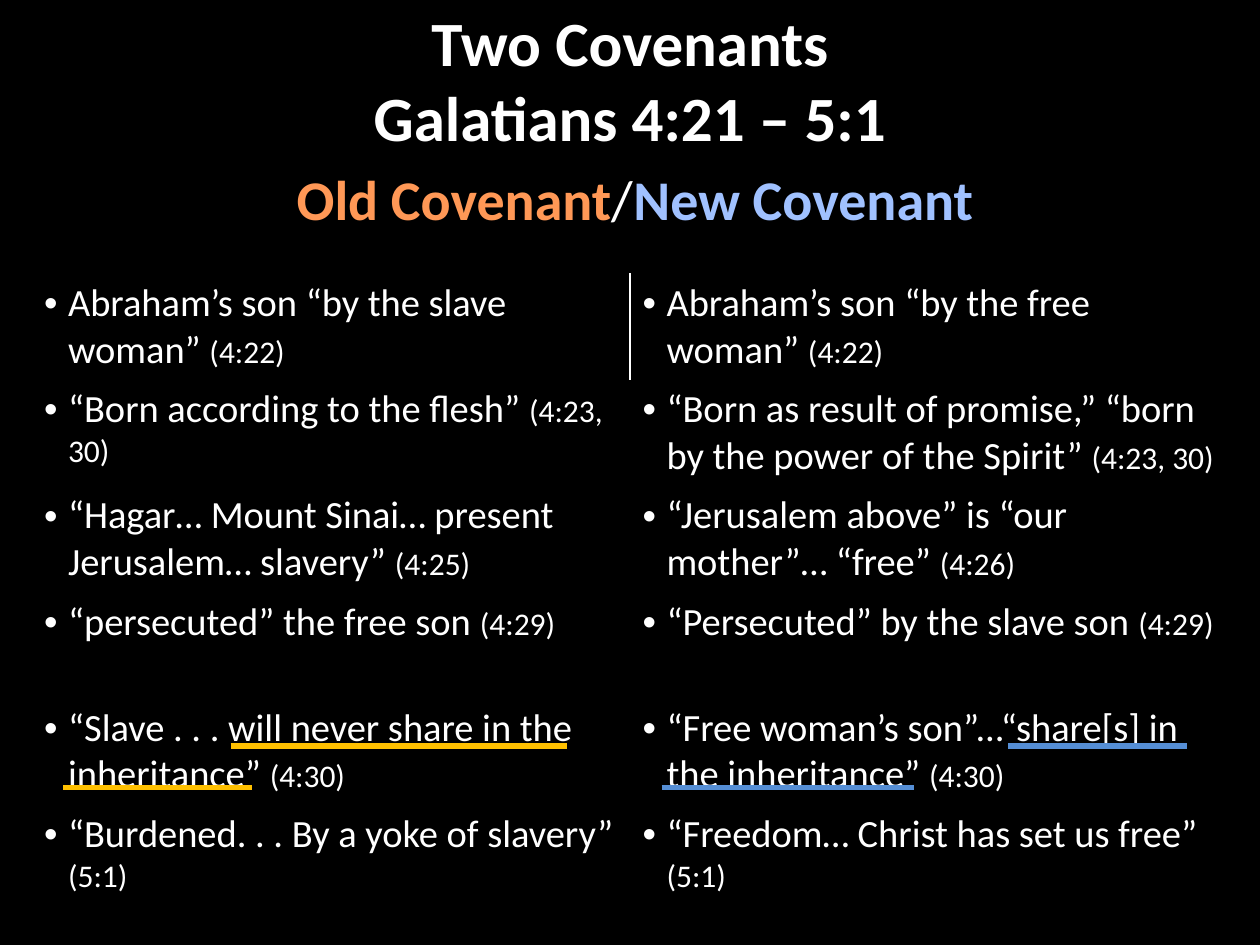
import pptx
import pptx.util
import pptx.dml.color
import pptx.enum.shapes
import pptx.enum.text
import pptx.oxml.ns
import lxml.etree

Inches = pptx.util.Inches
qn = pptx.oxml.ns.qn

COLOURS = {
    "background": "000000",
    "text": "FFFFFF",
    "old": "FF9856",
    "new": "A0C1FF",
    "old_rule": "FFC000",
    "new_rule": "558ED5",
}
NO_TABLE_STYLE = "{2D5ABB26-0587-4C30-8999-92F81FD0307C}"


def add_run(paragraph, text, size, colour="text", bold=False):
    run = paragraph.add_run()
    run.text = text
    run.font.name = "Calibri"
    run.font.size = pptx.util.Pt(size)
    run.font.bold = bold
    run.font.color.rgb = pptx.dml.color.RGBColor.from_string(COLOURS[colour])


def add_heading(left, top, width, height):
    frame = slide.shapes.add_textbox(
        Inches(left), Inches(top), Inches(width), Inches(height)
    ).text_frame
    frame.word_wrap = True
    frame.vertical_anchor = pptx.enum.text.MSO_ANCHOR.MIDDLE
    frame.margin_left = frame.margin_right = 0
    frame.margin_top = frame.margin_bottom = 0
    frame.paragraphs[0].alignment = pptx.enum.text.PP_ALIGN.CENTER
    return frame.paragraphs[0]


presentation = pptx.Presentation()
presentation.slide_width = Inches(10)
presentation.slide_height = Inches(7.5)
slide = presentation.slides.add_slide(presentation.slide_layouts[6])
slide.background.fill.solid()
slide.background.fill.fore_color.rgb = pptx.dml.color.RGBColor.from_string(
    COLOURS["background"]
)

comparisons = [
    (("Abraham’s son “by the slave woman” ", "(4:22)"),
     ("Abraham’s son “by the free woman” ", "(4:22)")),
    (("“Born according to the flesh” ", "(4:23, 30)"),
     ("“Born as result of promise,” “born by the power of the Spirit” ", "(4:23, 30)")),
    (("“Hagar… Mount Sinai… present Jerusalem… slavery” ", "(4:25)"),
     ("“Jerusalem above” is “our mother”… “free” ", "(4:26)")),
    (("“persecuted” the free son ", "(4:29)"),
     ("“Persecuted” by the slave son ", "(4:29)")),
    (("“Slave . . . will never share in the inheritance” ", "(4:30)"),
     ("“Free woman’s son”...“share[s] in the inheritance” ", "(4:30)")),
    (("“Burdened. . . By a yoke of slavery” ", "(5:1)"),
     ("“Freedom… Christ has set us free” ", "(5:1)")),
]
covenants_frame = slide.shapes.add_table(
    len(comparisons), 2, Inches(0.25), Inches(2.17), Inches(9.5), Inches(5.04)
)
covenants = covenants_frame.table
covenants.first_row = False
covenants.horz_banding = False
for style_id in covenants_frame._element.iter(qn("a:tableStyleId")):
    style_id.text = NO_TABLE_STYLE

for row, comparison in enumerate(comparisons):
    for column, (statement, verse) in enumerate(comparison):
        cell = covenants.cell(row, column)
        point = cell.text_frame.paragraphs[0]
        properties = point._p.get_or_add_pPr()
        properties.set("marL", str(Inches(0.19)))
        properties.set("indent", str(Inches(-0.19)))
        bullet_font = lxml.etree.SubElement(properties, qn("a:buFont"))
        bullet_font.set("typeface", "Arial")
        lxml.etree.SubElement(properties, qn("a:buChar")).set("char", "•")
        add_run(point, statement, 22)
        add_run(point, verse, 18)
        if row == 0:
            side = ("a:lnR", "a:lnL")[column]
            divider = lxml.etree.SubElement(cell._tc.get_or_add_tcPr(), qn(side))
            divider.set("w", str(pptx.util.Pt(1)))
            divider_fill = lxml.etree.SubElement(divider, qn("a:solidFill"))
            lxml.etree.SubElement(divider_fill, qn("a:srgbClr")).set("val", COLOURS["text"])
        cell.fill.background()

title = add_heading(0.5, 0, 9, 1.25)
add_run(title, "Two Covenants", 36, bold=True)
title.add_line_break()
add_run(title, "Galatians 4:21 – 5:1", 36, bold=True)

subtitle = add_heading(0.54, 1.25, 9, 0.64)
add_run(subtitle, "Old Covenant", 32, "old", True)
add_run(subtitle, "/", 32)
add_run(subtitle, "New Covenant", 32, "new", True)

underlines = [
    (1.83, 4.5, 5.92, "old_rule"),
    (0.5, 2, 6.25, "old_rule"),
    (8, 9.42, 5.92, "new_rule"),
    (5.25, 7.25, 6.25, "new_rule"),
]
for start, end, height, colour in underlines:
    underline = slide.shapes.add_connector(
        pptx.enum.shapes.MSO_CONNECTOR.STRAIGHT,
        Inches(start), Inches(height), Inches(end), Inches(height),
    )
    underline.line.color.rgb = pptx.dml.color.RGBColor.from_string(COLOURS[colour])
    underline.line.width = pptx.util.Pt(3)
    lxml.etree.SubElement(underline._element.spPr, qn("a:effectLst"))

presentation.save("out.pptx")
